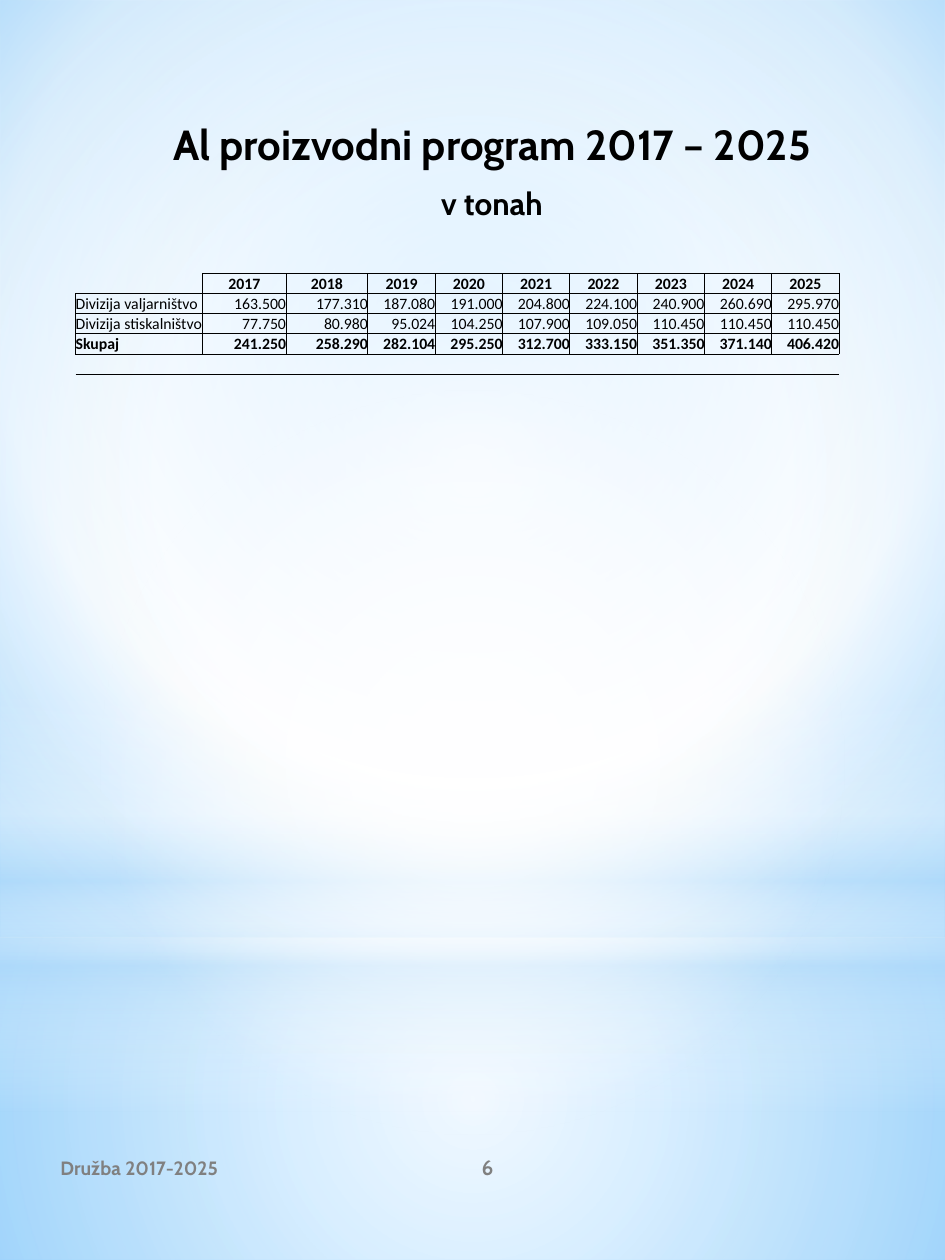
from lxml import etree
from pptx import Presentation
from pptx.dml.color import RGBColor
from pptx.enum import shapes, text
from pptx.oxml import parse_xml
from pptx.oxml.ns import nsdecls, qn
from pptx.util import Inches, Pt

BLACK = RGBColor(0x00, 0x00, 0x00)
GRAY = RGBColor(0x80, 0x80, 0x80)
WHITE = RGBColor(0xFF, 0xFF, 0xFF)
MIST = RGBColor(0xB4, 0xDC, 0xFA)
SKY = RGBColor(0x9E, 0xD5, 0xFF)
BLUE = RGBColor(0x5B, 0xB9, 0xFF)

CENTERED = (50, 50, 50, 50)
LEFT, CENTER, RIGHT = text.PP_ALIGN.LEFT, text.PP_ALIGN.CENTER, text.PP_ALIGN.RIGHT
RECTANGLE, OVAL = shapes.MSO_SHAPE.RECTANGLE, shapes.MSO_SHAPE.OVAL

YEARS = [str(year) for year in range(2017, 2026)]
PRODUCTION = [
    ("Divizija valjarništvo", "163.500", "177.310", "187.080", "191.000", "204.800",
     "224.100", "240.900", "260.690", "295.970"),
    ("Divizija stiskalništvo", "77.750", "80.980", "95.024", "104.250", "107.900",
     "109.050", "110.450", "110.450", "110.450"),
    ("Skupaj", "241.250", "258.290", "282.104", "295.250", "312.700",
     "333.150", "351.350", "371.140", "406.420"),
]


def gradient_xml(stops, focus=None):
    stop_xml = "".join(
        f'<a:gs pos="{position * 1000}"><a:srgbClr val="{color}">'
        f'<a:alpha val="{opacity * 1000}"/></a:srgbClr></a:gs>'
        for position, color, opacity in stops)
    if focus:
        left, top, right, bottom = (side * 1000 for side in focus)
        shade = (f'<a:path path="circle"><a:fillToRect l="{left}" t="{top}" '
                 f'r="{right}" b="{bottom}"/></a:path>')
    else:
        shade = '<a:lin ang="5400000" scaled="0"/>'
    return parse_xml(f'<a:gradFill {nsdecls("a")} rotWithShape="1">'
                     f'<a:gsLst>{stop_xml}</a:gsLst>{shade}</a:gradFill>')


def apply_gradient(fill, holder, stops, focus=None):
    fill.solid()
    solid = holder.find(qn("a:solidFill"))
    holder.replace(solid, gradient_xml(stops, focus))


def write(paragraph, content, size=9, font="Calibri", color=BLACK, bold=False,
          align=LEFT, before=0):
    paragraph.alignment = align
    paragraph.space_before = Pt(before)
    run = paragraph.add_run()
    run.text = content
    run.font.size = Pt(size)
    run.font.name = font
    run.font.bold = bold
    run.font.color.rgb = color


def add_text_frame(slide, box, anchor):
    frame = slide.shapes.add_textbox(*map(Inches, box)).text_frame
    frame.word_wrap = True
    frame.vertical_anchor = anchor
    return frame


def add_glow(slide, kind, box, stops, focus=None):
    shape = slide.shapes.add_shape(kind, *map(Inches, box))
    shape.shadow.inherit = False
    shape.line.fill.background()
    apply_gradient(shape.fill, shape.element.spPr, stops, focus)


def add_backdrop(slide, width, height):
    fill = slide.background.fill
    holder = slide.element.xpath(".//p:bgPr")[0]
    apply_gradient(fill, holder, [(0, SKY, 100), (60, WHITE, 100), (100, BLUE, 100)],
                   (20, 10, 20, 60))
    horizon = 7.44
    add_glow(slide, RECTANGLE, (0, horizon, width, height - horizon),
             [(0, WHITE, 91), (37, WHITE, 76), (100, MIST, 79)], CENTERED)
    add_glow(slide, RECTANGLE, (0, 0, width, horizon),
             [(0, WHITE, 89), (48, WHITE, 62), (100, MIST, 79)], CENTERED)
    add_glow(slide, RECTANGLE, (0, 5.49, width, 3.33),
             [(0, WHITE, 0), (29, WHITE, 30), (45, MIST, 40),
              (55, WHITE, 26), (65, MIST, 60), (100, WHITE, 0)])
    add_glow(slide, OVAL, (0, 2.33, width, horizon),
             [(0, WHITE, 100), (56, WHITE, 0)], CENTERED)


def add_title(slide, box):
    frame = add_text_frame(slide, box, text.MSO_ANCHOR.TOP)
    frame.auto_size = text.MSO_AUTO_SIZE.SHAPE_TO_FIT_TEXT
    write(frame.paragraphs[0], "Al proizvodni program 2017 – 2025", size=24,
          font="Cabin", bold=True, align=CENTER)
    write(frame.add_paragraph(), "v tonah", size=18, font="Cabin", bold=True,
          align=CENTER, before=9)


def add_footer(slide, left, top, height):
    for content, offset, width, size, align in [
            ("Družba 2017-2025", 0, 2.75, 11, LEFT), ("6", 2.74, 1.5, 12, CENTER)]:
        frame = add_text_frame(slide, (left + offset, top, width, height),
                               text.MSO_ANCHOR.MIDDLE)
        write(frame.paragraphs[0], content, size=size, font="Cabin", color=GRAY,
              bold=True, align=align)


def set_borders(cell, visible):
    properties = cell._tc.get_or_add_tcPr()
    for index, side in enumerate("LRTB"):
        paint = (f'<a:solidFill><a:srgbClr val="{BLACK}"/></a:solidFill>'
                 if side in visible else "<a:noFill/>")
        properties.insert(index, parse_xml(
            f'<a:ln{side} {nsdecls("a")} w="{Pt(0.5)}">{paint}</a:ln{side}>'))


def add_production_table(slide, box):
    rows = [("", *YEARS), *PRODUCTION, ("",) * (len(YEARS) + 1)]
    last = len(rows) - 1
    left, top, width, height = map(Inches, box)
    table = slide.shapes.add_table(len(rows), len(rows[0]), left, top, width, height).table
    table.first_row = table.horz_banding = False
    leading = [Inches(1.01), Inches(0.66), Inches(0.65)]
    rest = len(rows[0]) - len(leading)
    column_widths = leading + [(width - sum(leading)) // rest] * rest
    for column, column_width in zip(table.columns, column_widths):
        column.width = column_width
    for row_index, values in enumerate(rows):
        table.rows[row_index].height = height // len(rows)
        for column_index, value in enumerate(values):
            cell = table.cell(row_index, column_index)
            cell.margin_left = cell.margin_right = cell.margin_top = cell.margin_bottom = 0
            cell.vertical_anchor = text.MSO_ANCHOR.BOTTOM
            cell.fill.background()
            paragraph = cell.text_frame.paragraphs[0]
            if value:
                align = CENTER if row_index == 0 else RIGHT if column_index else LEFT
                write(paragraph, value, bold=row_index in (0, last - 1), align=align)
                set_borders(cell, "LRTB")
            else:
                etree.SubElement(paragraph._p, qn("a:endParaRPr"), sz="900")
                set_borders(cell, "TB" if row_index == last else "RB")


def main():
    presentation = Presentation()
    presentation.slide_width = Inches(7.5)
    presentation.slide_height = Inches(10)
    slide = presentation.slides.add_slide(presentation.slide_layouts[6])
    add_backdrop(slide, 7.5, 10)
    add_footer(slide, 0.38, 9, 0.53)
    add_title(slide, (0.81, 0.89, 6.19, 0.96))
    add_production_table(slide, (0.6, 2.17, 6.06, 0.8))
    presentation.save("out.pptx")


if __name__ == "__main__":
    main()
